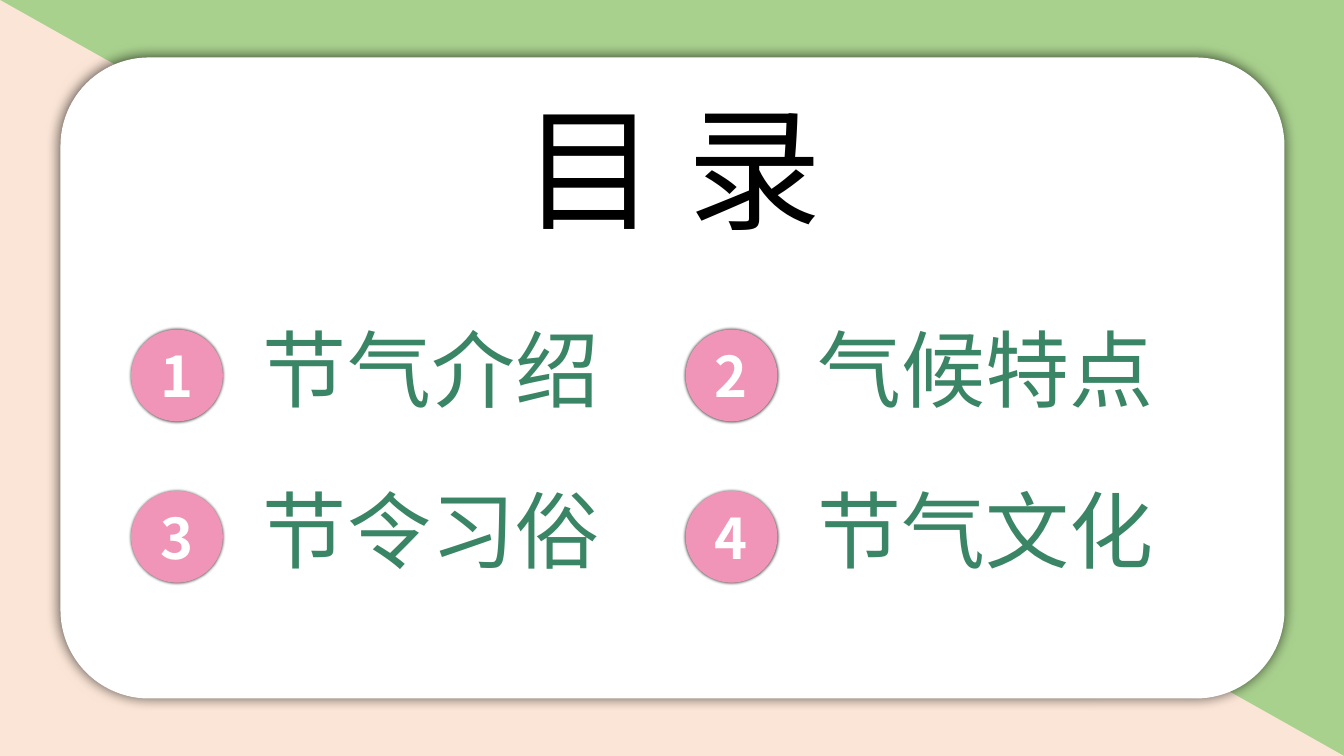
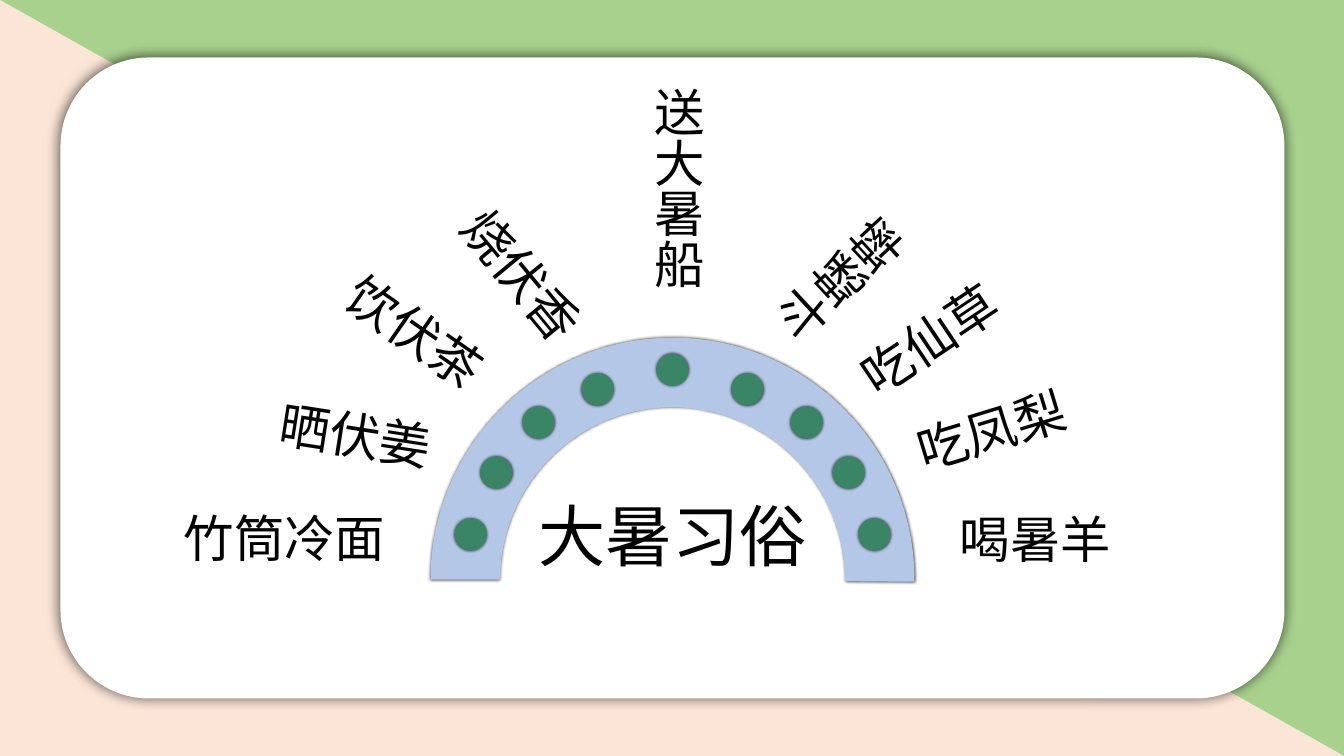
from lxml.etree import SubElement
from pptx import Presentation
from pptx.dml.color import RGBColor
from pptx.enum.shapes import MSO_SHAPE
from pptx.enum.text import MSO_ANCHOR, MSO_AUTO_SIZE, PP_ALIGN
from pptx.oxml.ns import qn
from pptx.util import Inches, Pt

WIDTH, HEIGHT = 13.33, 7.5
FONT = "Noto Sans CJK SC"
COLORS = {
    "leaf": "A9D18E", "peach": "FBE5D6", "white": "FFFFFF", "black": "000000",
    "green": "3A8565", "pink": "F095B8", "blue": "B4C7E7",
}
LEFT, MID, RIGHT = PP_ALIGN.LEFT, PP_ALIGN.CENTER, PP_ALIGN.RIGHT

# Contents: columns and rows of the grid
TOPICS = ["节气介绍", "气候特点", "节令习俗", "节气文化"]

# Dots: distance from the middle axis, top
DOTS = [(0, 3.51), (0.74, 3.7), (1.33, 4.03), (1.75, 4.53), (2, 5.14)]
AXIS, DOT = 6.67, 0.32

# Customs round the arc: text, left, top, turn, alignment
RAYS = [
    ("竹筒冷面", 1.18, 4.98, 0, RIGHT),
    ("晒伏姜", 1.64, 3.88, 8.9, RIGHT),
    ("饮伏茶", 2.32, 2.64, 34.7, RIGHT),
    ("烧伏香", 3.47, 1.97, 50.4, RIGHT),
    ("斗蟋蟀", 7.34, 2.06, 317.2, LEFT),
    ("吃仙草", 8.28, 2.72, 326.1, LEFT),
    ("吃凤梨", 8.96, 3.76, 343, LEFT),
    ("喝暑羊", 9.42, 4.99, 0, LEFT),
]


def color(name):
    return RGBColor.from_string(COLORS[name])


def write(frame, text, size, ink, align, bold=False):
    """Put one run of text in a frame."""
    frame.word_wrap = True
    para = frame.paragraphs[0]
    para.alignment = align
    run = para.add_run()
    run.text = text
    font = run.font
    font.size, font.bold, font.name = Pt(size), bold, FONT
    font.color.rgb = color(ink)
    SubElement(run._r.get_or_add_rPr(), qn("a:ea"), typeface=FONT)


def label(slide, text, box, size, ink="black", align=MID, turn=0):
    """Add a text box that grows with its text."""
    item = slide.shapes.add_textbox(*map(Inches, box))
    item.rotation = turn
    write(item.text_frame, text, size, ink, align)
    item.text_frame.auto_size = MSO_AUTO_SIZE.SHAPE_TO_FIT_TEXT
    return item


def glow(shape, blur, alpha):
    """Add a soft shadow with no offset."""
    effects = shape._element.spPr.find(qn("a:effectLst"))
    outer = SubElement(effects, qn("a:outerShdw"), blurRad=str(Pt(blur)),
                       dist="0", dir="0", algn="ctr", rotWithShape="0")
    tint = SubElement(outer, qn("a:srgbClr"), val=COLORS["black"])
    SubElement(tint, qn("a:alpha"), val=str(alpha * 1000))


def block(slide, kind, box, fill, adjust=(), blur=0, alpha=70):
    """Add a filled shape without an outline."""
    shape = slide.shapes.add_shape(kind, *map(Inches, box))
    for index, value in enumerate(adjust):
        shape.adjustments[index] = value
    shape.fill.solid()
    shape.fill.fore_color.rgb = color(fill)
    shape.line.fill.background()
    shape.shadow.inherit = False
    if blur:
        glow(shape, blur, alpha)
    return shape


def page(deck):
    """Start a slide with the shared backdrop and white panel."""
    slide = deck.slides.add_slide(deck.slide_layouts[6])
    fill = slide.background.fill
    fill.solid()
    fill.fore_color.rgb = color("leaf")
    block(slide, MSO_SHAPE.ISOSCELES_TRIANGLE, (0, 0, WIDTH, HEIGHT), "peach", [0])
    block(slide, MSO_SHAPE.ROUNDED_RECTANGLE, (0.6, 0.57, 12.14, 6.36), "white",
          [0.138], blur=10)
    return slide


def topic(slide, index, text):
    """Add a numbered circle and its heading."""
    row, col = divmod(index, 2)
    left, top = 1.3 + 5.5 * col, 3.27 + 1.6 * row
    label(slide, text, (left + 1.21, top - 0.17, 4.02, 1.11), 60, "green", LEFT)
    disc = block(slide, MSO_SHAPE.OVAL, (left, top, 0.91, 0.91), "pink", blur=2)
    disc.text_frame.vertical_anchor = MSO_ANCHOR.MIDDLE
    write(disc.text_frame, str(index + 1), 40, "white", MID, bold=True)


def contents(deck):
    slide = page(deck)
    label(slide, "目 录", (3.66, 0.79, 6.01, 1.72), 96)
    for index, text in enumerate(TOPICS):
        topic(slide, index, text)


def customs(deck):
    slide = page(deck)
    # Arc and its title
    block(slide, MSO_SHAPE.BLOCK_ARC, (4.27, 3.35, 4.8, 4.8), "blue",
          [108, 0.31, 0.144], blur=2)
    label(slide, "大暑习俗", (4.97, 4.85, 3.4, 0.91), 48)
    # Dots mirrored about the axis
    for gap, top in DOTS:
        for side in sorted({-gap, gap}):
            block(slide, MSO_SHAPE.OVAL, (AXIS + side - DOT / 2, top, DOT, DOT),
                  "green", blur=2)
    # Upright and turned labels
    crown = label(slide, "送大暑船", (6.26, 0.77, 0.81, 2.35), 36, align=RIGHT)
    crown.text_frame._txBody.bodyPr.set("vert", "eaVert")
    for text, left, top, turn, align in RAYS:
        label(slide, text, (left, top, 2.74, 0.71), 36, align=align, turn=turn)


def main():
    deck = Presentation()
    deck.slide_width, deck.slide_height = Inches(WIDTH), Inches(HEIGHT)
    contents(deck)
    customs(deck)
    deck.save("out.pptx")


if __name__ == "__main__":
    main()
